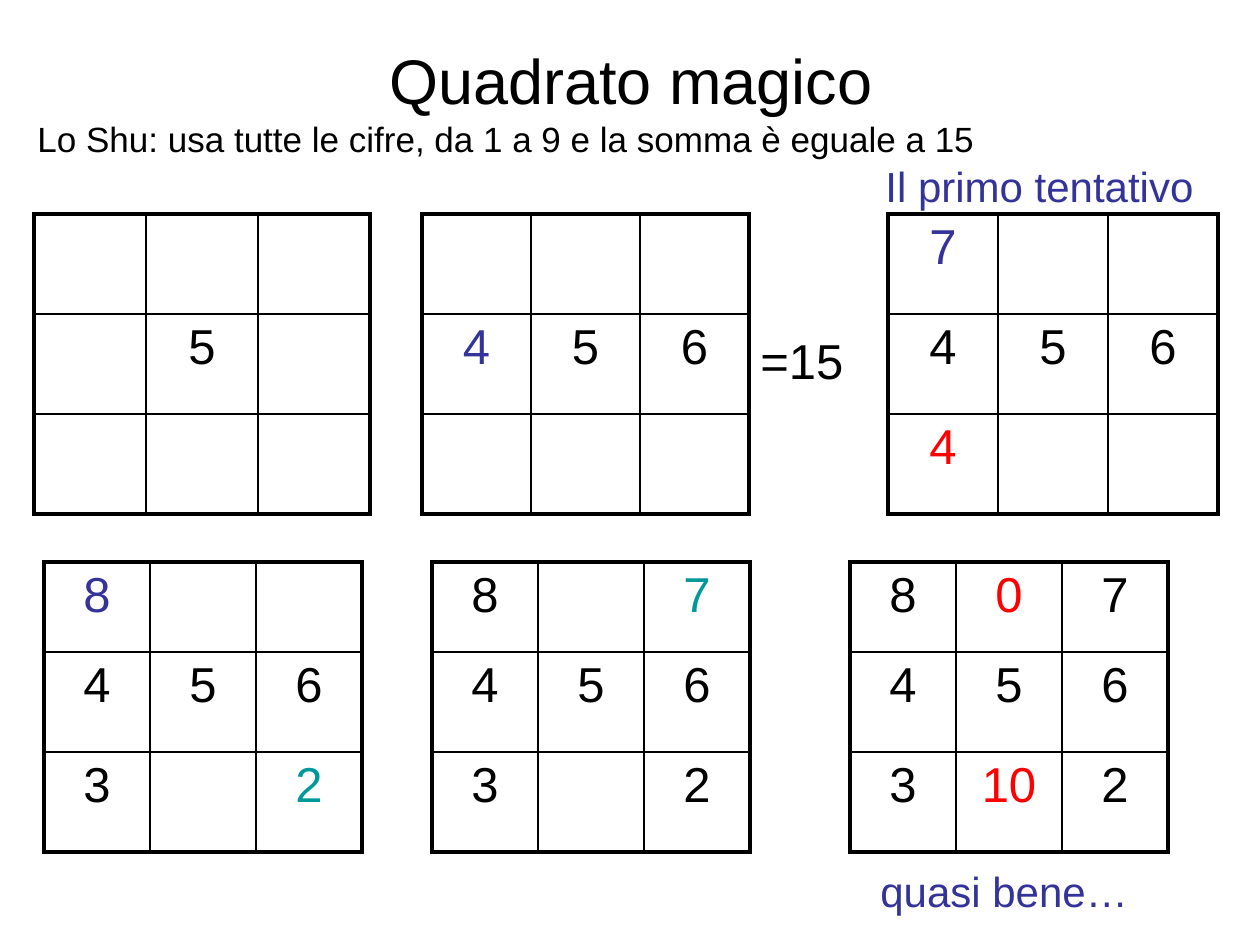
from dataclasses import dataclass, field

from lxml import etree
from pptx import Presentation
from pptx.dml.color import RGBColor
from pptx.enum import text
from pptx.oxml import ns
from pptx.util import Pt

PX = 914400 / 126
FONT = "Arial"
BLACK = RGBColor(0x00, 0x00, 0x00)
BLUE = RGBColor(0x33, 0x33, 0x99)
TEAL = RGBColor(0x00, 0x99, 0x99)
RED = RGBColor(0xFF, 0x00, 0x00)

TOP_Y, TOP_ROWS = 214, (100, 100, 100)
BOTTOM_Y, BOTTOM_ROWS = 562, (90, 100, 100)
EMPTY = "."
THIN, THICK = 1, 2.25


@dataclass
class Square:
    x: int
    y: int
    col_width: int
    row_heights: tuple[int, ...]
    rows: tuple[str, ...]
    tints: dict[tuple[int, int], RGBColor] = field(default_factory=dict)


@dataclass
class Label:
    text: str
    x: int
    y: int
    width: int
    height: int
    size: int
    color: RGBColor = BLACK
    centered: bool = False


SQUARES = [
    Square(34, TOP_Y, 112, TOP_ROWS, (". . .", ". 5 .", ". . .")),
    Square(422, TOP_Y, 109, TOP_ROWS, (". . .", "4 5 6", ". . ."), {(1, 0): BLUE}),
    Square(888, TOP_Y, 110, TOP_ROWS, ("7 . .", "4 5 6", "4 . ."),
           {(0, 0): BLUE, (2, 0): RED}),
    Square(44, BOTTOM_Y, 106, BOTTOM_ROWS, ("8 . .", "4 5 6", "3 . 2"),
           {(0, 0): BLUE, (2, 2): TEAL}),
    Square(432, BOTTOM_Y, 106, BOTTOM_ROWS, ("8 . 7", "4 5 6", "3 . 2"),
           {(0, 2): TEAL}),
    Square(850, BOTTOM_Y, 106, BOTTOM_ROWS, ("8 0 7", "4 5 6", "3 10 2"),
           {(0, 1): RED, (2, 1): RED}),
]

LABELS = [
    Label("Quadrato magico", 64, 0, 1134, 158, 36, centered=True),
    Label("=15", 748, 324, 108, 72, 28),
    Label("Lo Shu: usa tutte le cifre, da 1 a 9 e la somma è eguale a 15",
          25, 111, 1004, 55, 20),
    Label("quasi bene…", 868, 859, 276, 64, 24, BLUE),
    Label("Il primo tentativo", 873, 154, 336, 63, 24, BLUE),
]


def emu(px: int) -> int:
    return round(px * PX)


def style(p, size: int, color: RGBColor, centered: bool) -> None:
    if centered:
        p.alignment = text.PP_ALIGN.CENTER
    for r in p.runs:
        r.font.name = FONT
        r.font.size = Pt(size)
        r.font.color.rgb = color


def add_border(cell, side: str, width: float) -> None:
    """Add one black edge; side is L, R, T or B, called in that order."""
    tc_pr = cell._tc.get_or_add_tcPr()
    ln = etree.SubElement(tc_pr, ns.qn(f"a:ln{side}"), w=str(Pt(width)))
    fill = etree.SubElement(ln, ns.qn("a:solidFill"))
    etree.SubElement(fill, ns.qn("a:srgbClr"), val=str(BLACK))


def add_square(slide, square: Square) -> None:
    n = len(square.rows)
    frame = slide.shapes.add_table(
        n, n, emu(square.x), emu(square.y),
        emu(square.col_width * n), emu(sum(square.row_heights)))
    table = frame.table
    table.first_row = table.horz_banding = False
    for column in table.columns:
        column.width = emu(square.col_width)
    for i, (row, height) in enumerate(zip(square.rows, square.row_heights)):
        table.rows[i].height = emu(height)
        for j, digit in enumerate(row.split()):
            cell = table.cell(i, j)
            outer = {"L": j == 0, "R": j == n - 1, "T": i == 0, "B": i == n - 1}
            for side, is_outer in outer.items():
                add_border(cell, side, THICK if is_outer else THIN)
            cell.fill.background()
            if digit != EMPTY:
                p = cell.text_frame.paragraphs[0]
                p.text = digit
                style(p, 28, square.tints.get((i, j), BLACK), True)


def add_label(slide, label: Label) -> None:
    sp = slide.shapes.add_textbox(
        emu(label.x), emu(label.y), emu(label.width), emu(label.height))
    tf = sp.text_frame
    tf.text = label.text
    tf.word_wrap = label.centered
    if label.centered:
        tf.vertical_anchor = text.MSO_ANCHOR.MIDDLE
    style(tf.paragraphs[0], label.size, label.color, label.centered)


def main() -> None:
    prs = Presentation()
    prs.slide_width, prs.slide_height = emu(1260), emu(945)
    slide = prs.slides.add_slide(prs.slide_layouts[6])
    for square in SQUARES:
        add_square(slide, square)
    for label in LABELS:
        add_label(slide, label)
    prs.save("out.pptx")


if __name__ == "__main__":
    main()
